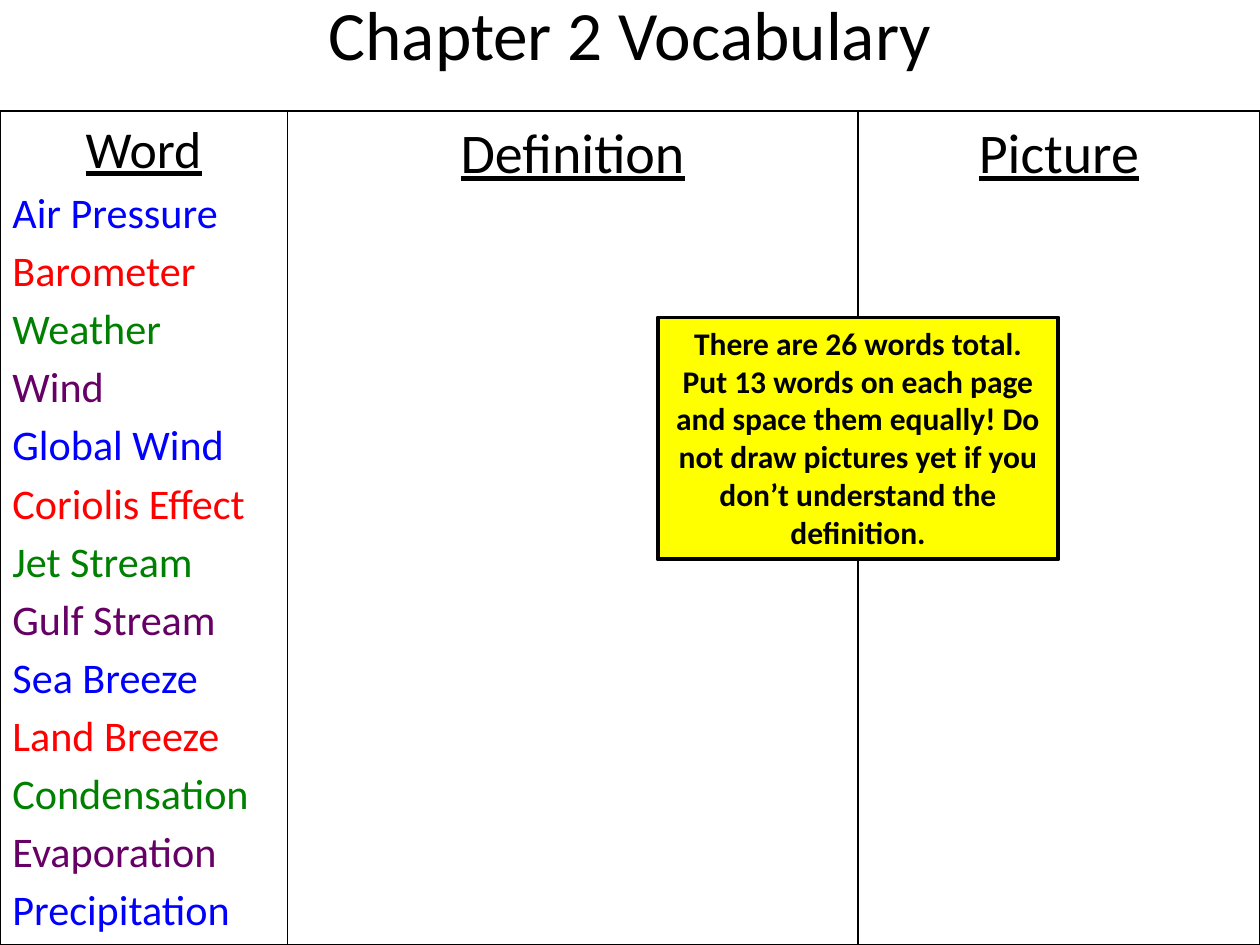
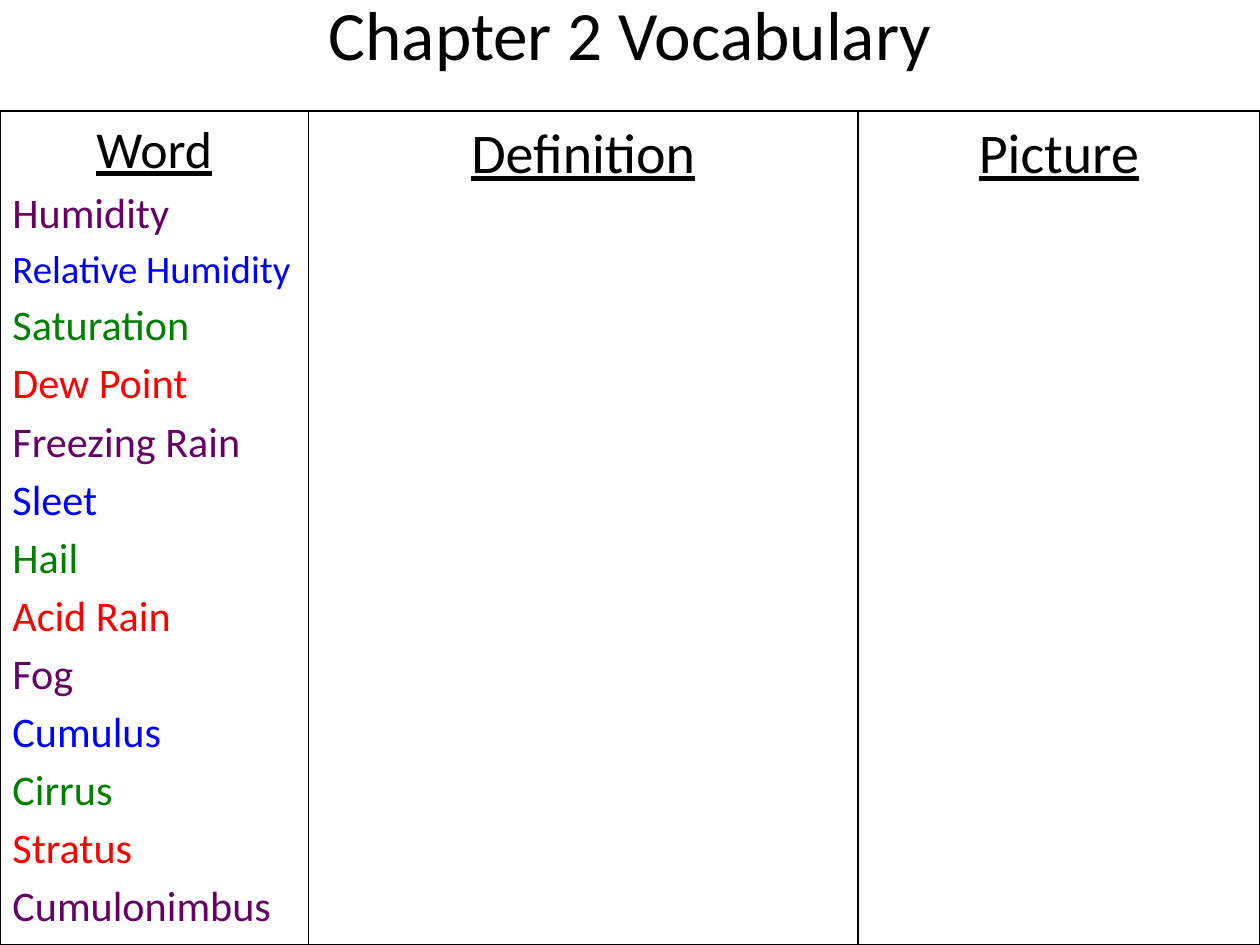
from dataclasses import dataclass
from itertools import cycle
from typing import Optional

from pptx import Presentation
from pptx.dml.color import RGBColor
from pptx.enum.shapes import MSO_SHAPE
from pptx.enum.text import MSO_ANCHOR, PP_ALIGN
from pptx.util import Inches, Pt

RECTANGLE = MSO_SHAPE.RECTANGLE
TOP, MIDDLE = MSO_ANCHOR.TOP, MSO_ANCHOR.MIDDLE
LEFT, CENTER = PP_ALIGN.LEFT, PP_ALIGN.CENTER

PAGE_WIDTH, PAGE_HEIGHT = 10, 7.5
TABLE_TOP = 0.88
PICTURE_LEFT = 6.81


@dataclass(frozen=True)
class Theme:
    font: str = "Calibri"
    ink: str = "000000"
    blue: str = "0000FF"
    red: str = "FF0000"
    green: str = "008000"
    purple: str = "660066"
    note_fill: str = "FFFF00"
    title_size: float = 39.6
    heading_size: float = 32
    word_heading_size: float = 29.6
    word_size: float = 24.1
    long_word_size: float = 22.2
    note_size: float = 18
    word_gap: float = 4.25
    thin_line: float = 0.75
    thick_line: float = 2.25


THEME = Theme()


@dataclass(frozen=True)
class Area:
    left: float
    top: float
    width: float
    height: float

    def lengths(self) -> list:
        return [Inches(n) for n in (self.left, self.top, self.width, self.height)]


@dataclass(frozen=True)
class VocabularyPage:
    words: tuple
    colours: tuple
    word_width: float
    note: str = ""


TITLE_AREA = Area(0.5, -0.05, 9, 0.62)
NOTE_AREA = Area(5.22, 2.52, 3.18, 1.92)
LONG_WORDS = {"Relative Humidity"}

PAGES = (
    VocabularyPage(
        words=("Air Pressure", "Barometer", "Weather", "Wind", "Global Wind",
               "Coriolis Effect", "Jet Stream", "Gulf Stream", "Sea Breeze",
               "Land Breeze", "Condensation", "Evaporation", "Precipitation"),
        colours=(THEME.blue, THEME.red, THEME.green, THEME.purple),
        word_width=2.28,
        note="There are 26 words total. Put 13 words on each page and space "
             "them equally! Do not draw pictures yet if you don’t understand "
             "the definition.",
    ),
    VocabularyPage(
        words=("Humidity", "Relative Humidity", "Saturation", "Dew Point",
               "Freezing Rain", "Sleet", "Hail", "Acid Rain", "Fog", "Cumulus",
               "Cirrus", "Stratus", "Cumulonimbus"),
        colours=(THEME.purple, THEME.blue, THEME.green, THEME.red),
        word_width=2.45,
    ),
)


def write(para, text: str, *, size: float, colour: str = THEME.ink,
          align=CENTER, bold: bool = False, underline: bool = False,
          before: float = 0) -> None:
    """Put formatted text into a paragraph."""
    para.alignment = align
    para.space_before = Pt(before)
    span = para.add_run()
    span.text = text
    span.font.name = THEME.font
    span.font.size = Pt(size)
    span.font.bold = bold
    span.font.underline = underline
    span.font.color.rgb = RGBColor.from_string(colour)


def add_panel(page, area: Area, *, line: float = THEME.thin_line,
              fill: Optional[str] = None):
    """Draw an outlined rectangle and return its text frame."""
    box = page.shapes.add_shape(RECTANGLE, *area.lengths())
    box.shadow.inherit = False
    if fill:
        box.fill.solid()
        box.fill.fore_color.rgb = RGBColor.from_string(fill)
    else:
        box.fill.background()
    box.line.color.rgb = RGBColor.from_string(THEME.ink)
    box.line.width = Pt(line)
    frame = box.text_frame
    frame.word_wrap = True
    frame.vertical_anchor = TOP
    return frame


def add_title(page, text: str) -> None:
    frame = page.shapes.add_textbox(*TITLE_AREA.lengths()).text_frame
    frame.word_wrap = True
    frame.vertical_anchor = MIDDLE
    write(frame.paragraphs[0], text, size=THEME.title_size)


def add_column(page, heading: str, left: float, right: float,
               size: float = THEME.heading_size):
    """Draw one full-height column with its underlined heading."""
    area = Area(left, TABLE_TOP, right - left, PAGE_HEIGHT - TABLE_TOP)
    frame = add_panel(page, area)
    write(frame.paragraphs[0], heading, size=size, underline=True)
    return frame


def build_page(deck, content: VocabularyPage) -> None:
    page = deck.slides.add_slide(deck.slide_layouts[6])
    add_title(page, "Chapter 2 Vocabulary")

    # Three columns
    add_column(page, "Definition", content.word_width, PICTURE_LEFT)
    word_frame = add_column(page, "Word", 0, content.word_width,
                            THEME.word_heading_size)
    add_column(page, "Picture", PICTURE_LEFT, PAGE_WIDTH)

    # Word list in repeating colours
    for word, colour in zip(content.words, cycle(content.colours)):
        size = THEME.long_word_size if word in LONG_WORDS else THEME.word_size
        write(word_frame.add_paragraph(), word, size=size, colour=colour,
              align=LEFT, before=THEME.word_gap)

    # Instruction note
    if content.note:
        frame = add_panel(page, NOTE_AREA, line=THEME.thick_line,
                          fill=THEME.note_fill)
        write(frame.paragraphs[0], content.note, size=THEME.note_size, bold=True)


def main() -> None:
    deck = Presentation()
    deck.slide_width = Inches(PAGE_WIDTH)
    deck.slide_height = Inches(PAGE_HEIGHT)
    for content in PAGES:
        build_page(deck, content)
    deck.save("out.pptx")


if __name__ == "__main__":
    main()
